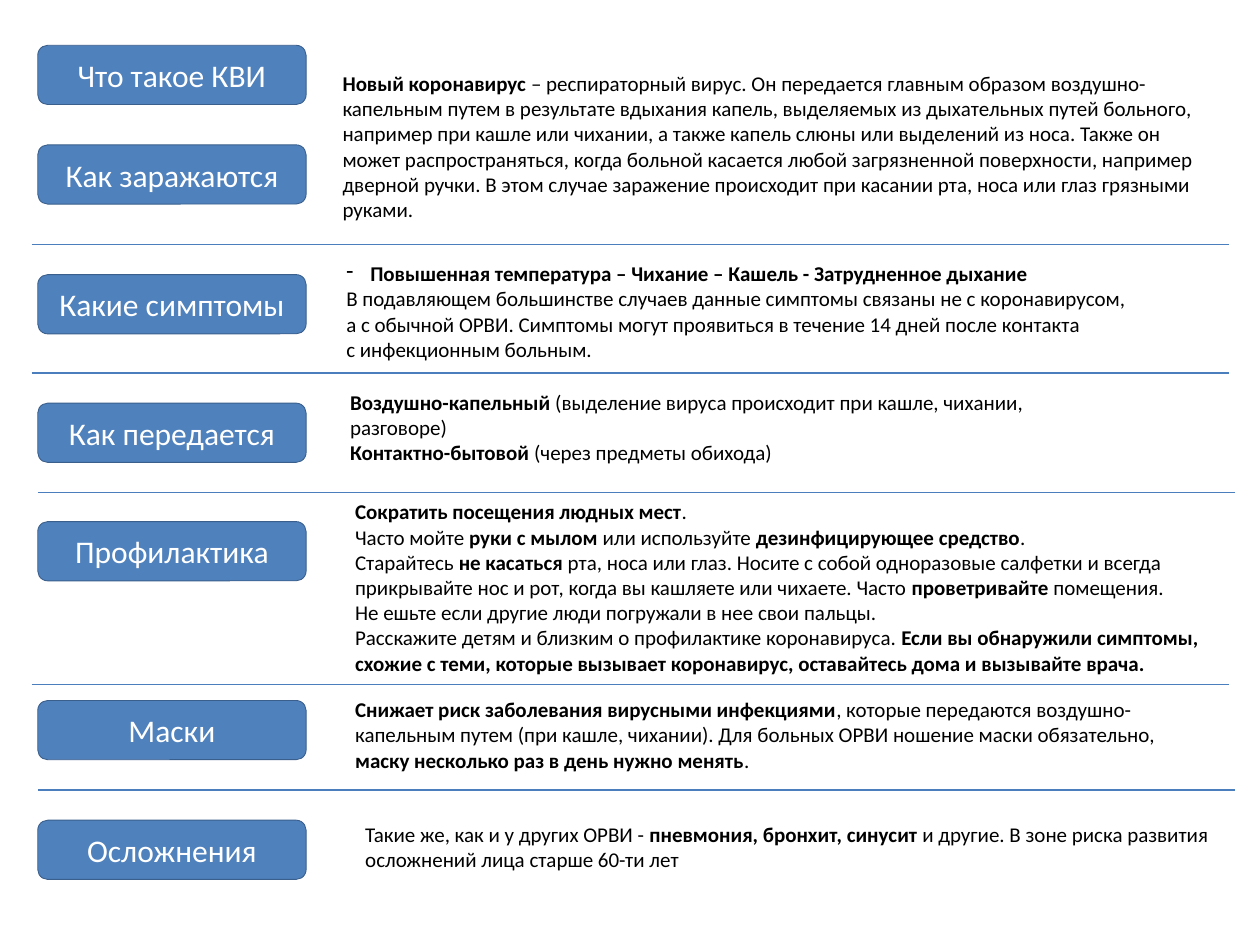
"""Build a one-slide guide to the coronavirus infection."""
from dataclasses import dataclass
from lxml.etree import SubElement
from pptx import Presentation
from pptx.dml.color import RGBColor as Color
from pptx.enum.shapes import MSO_CONNECTOR as Link, MSO_SHAPE as Shape
from pptx.enum.text import MSO_ANCHOR as Anchor, MSO_AUTO_SIZE as Fit, PP_ALIGN as Align
from pptx.oxml.ns import qn
from pptx.util import Inches, Pt


@dataclass
class Theme:
    font: str = "Calibri"
    head: int = 18
    body: int = 12
    fill: Color = Color(0x4F, 0x81, 0xBD)
    edge: Color = Color(0x3A, 0x5F, 0x8C)
    rule: Color = Color(0x4B, 0x7E, 0xBC)
    white: Color = Color(255, 255, 255)
    black: Color = Color(0, 0, 0)


def write(frame, text, size, color, align=Align.LEFT, anchor=Anchor.TOP, fit=Fit.NONE):
    frame.word_wrap = True
    frame.auto_size = fit
    frame.vertical_anchor = anchor
    for num, block in enumerate(text.split("\n\n")):
        para = frame.add_paragraph() if num else frame.paragraphs[0]
        para.alignment = align
        if block.startswith("- "):
            block = block[2:]
            props = para._p.get_or_add_pPr()
            props.set("marL", str(Inches(0.19)))
            props.set("indent", str(Inches(-0.19)))
            SubElement(props, qn("a:buChar"), char="-")
        for part, chunk in enumerate(block.split("**")):
            for row, line in enumerate(chunk.split("\n")):
                if row:
                    para.add_line_break()
                if line:
                    run = para.add_run()
                    run.text = line
                    run.font.name = theme.font
                    run.font.size = Pt(size)
                    run.font.bold = part % 2 == 1
                    run.font.color.rgb = color


theme = Theme()
deck = Presentation()
deck.slide_width, deck.slide_height = Inches(10), Inches(7.5)
slide = deck.slides.add_slide(deck.slide_layouts[6])

topics = [
    ("Что такое КВИ", 0.36),
    ("Как заражаются", 1.15),
    ("Какие симптомы", 2.18),
    ("Как передается", 3.2),
    ("Профилактика", 4.14),
    ("Маски", 5.56),
    ("Осложнения", 6.51),
]
for name, top in topics:
    box = slide.shapes.add_shape(
        Shape.ROUNDED_RECTANGLE, Inches(0.3), Inches(top), Inches(2.13), Inches(0.47))
    box.shadow.inherit = False
    box.fill.solid()
    box.fill.fore_color.rgb = theme.fill
    box.line.color.rgb = theme.edge
    box.line.width = Pt(0.5)
    write(box.text_frame, name, theme.head, theme.white, Align.CENTER, Anchor.MIDDLE)

notes = [
    (2.62, 0.51, 7.18, 1.35,
     "**Новый коронавирус **– респираторный вирус. Он передается главным образом "
     "воздушно-капельным путем в результате вдыхания капель, выделяемых из дыхательных "
     "путей больного, например при кашле или чихании, а также капель слюны или выделений "
     "из носа. Также он может распространяться, когда больной касается любой загрязненной "
     "поверхности, например дверной ручки. В этом случае заражение происходит при касании "
     "рта, носа или глаз грязными руками."),
    (2.65, 2.02, 7.38, 0.91,
     "- **Повышенная температура – Чихание – Кашель - Затрудненное дыхание**\n\n"
     "В подавляющем большинстве случаев данные симптомы связаны не с коронавирусом,\n\n"
     "а с обычной ОРВИ. Симптомы могут проявиться в течение 14 дней после контакта\n\n"
     "с инфекционным больным."),
    (2.68, 3.04, 6.2, 0.71,
     "**Воздушно-капельный **(выделение вируса происходит при кашле, чихании, разговоре)\n"
     "**Контактно-бытовой **(через предметы обихода)"),
    (2.72, 3.91, 7.03, 1.51,
     "**Сократить посещения людных мест**.\n"
     "Часто мойте **руки с мылом **или используйте **дезинфицирующее средство**.\n"
     "Старайтесь **не касаться **рта, носа или глаз. Носите с собой одноразовые салфетки "
     "и всегда прикрывайте нос и рот, когда вы кашляете или чихаете. "
     "Часто **проветривайте** помещения.\n"
     "Не ешьте если другие люди погружали в нее свои пальцы.\n"
     "Расскажите детям и близким о профилактике коронавируса. **Если вы обнаружили "
     "симптомы, схожие с теми, которые вызывает коронавирус, оставайтесь дома и "
     "вызывайте врача.**"),
    (2.72, 5.48, 6.68, 0.71,
     "**Снижает риск заболевания вирусными инфекциями**, которые передаются "
     "воздушно-капельным путем (при кашле, чихании). Для больных ОРВИ ношение маски "
     "обязательно, **маску несколько раз в день нужно менять**."),
    (2.8, 6.47, 6.95, 0.5,
     "Такие же, как и у других ОРВИ - **пневмония, бронхит, синусит **и другие. "
     "В зоне риска развития осложнений лица старше 60-ти лет"),
]
for left, top, width, height, text in notes:
    box = slide.shapes.add_textbox(Inches(left), Inches(top), Inches(width), Inches(height))
    write(box.text_frame, text, theme.body, theme.black, fit=Fit.SHAPE_TO_FIT_TEXT)

for left, top in [(0.25, 1.94), (0.25, 2.96), (0.3, 3.91), (0.25, 5.43), (0.3, 6.27)]:
    rule = slide.shapes.add_connector(
        Link.STRAIGHT, Inches(left), Inches(top), Inches(left + 9.5), Inches(top))
    rule.line.color.rgb = theme.rule
    rule.line.width = Pt(0.75)
    SubElement(rule._element.spPr, qn("a:effectLst"))

deck.save("out.pptx")
